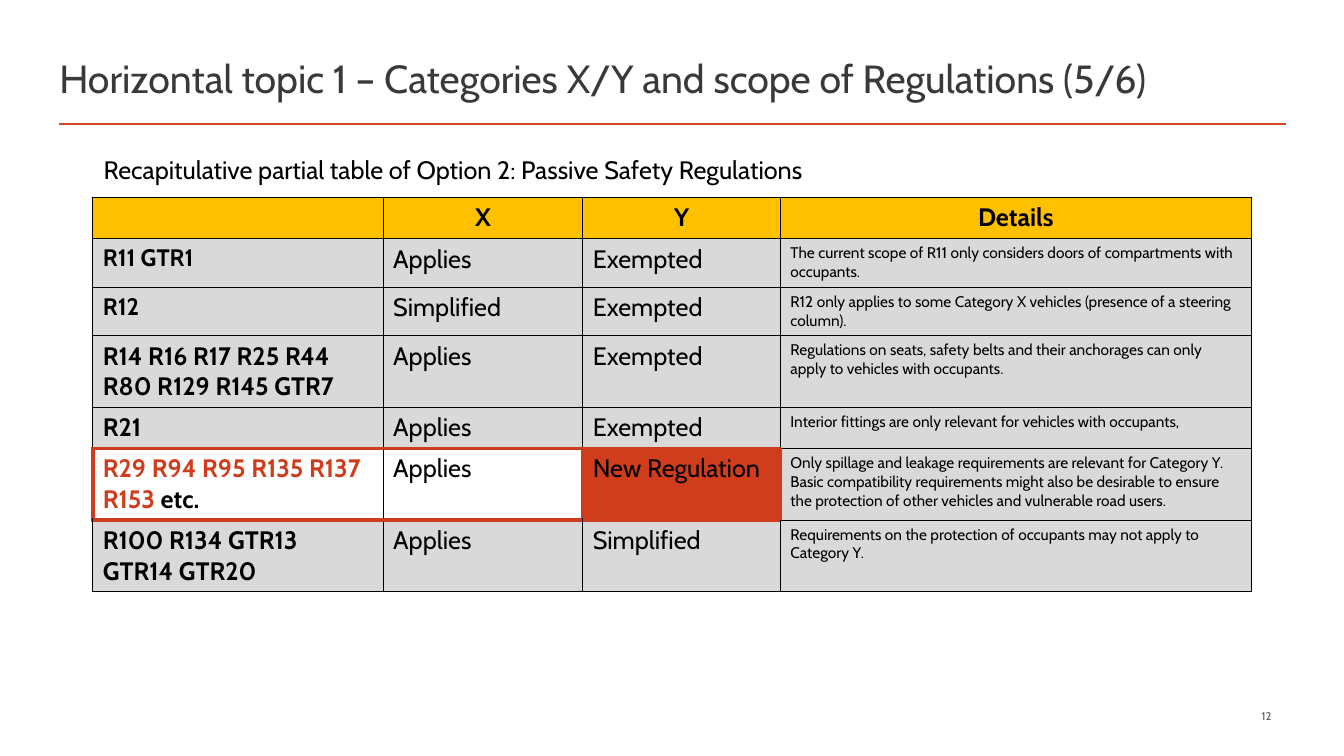
from lxml import etree
from pptx import Presentation
from pptx.dml.color import RGBColor
from pptx.enum.shapes import MSO_CONNECTOR
from pptx.enum.text import MSO_ANCHOR, PP_ALIGN
from pptx.oxml.ns import qn
from pptx.util import Inches, Pt

LEFT, CENTER, RIGHT = PP_ALIGN.LEFT, PP_ALIGN.CENTER, PP_ALIGN.RIGHT
TOP, MIDDLE = MSO_ANCHOR.TOP, MSO_ANCHOR.MIDDLE
STRAIGHT = MSO_CONNECTOR.STRAIGHT

FONT = "Cabin"
BLACK, WHITE, GREY, AMBER, RED = "000000", "FFFFFF", "D9D9D9", "FFC000", "CF3D1C"
RULE_COLOR = "D24726"

TITLE = "Horizontal topic 1 – Categories X/Y and scope of Regulations (5/6)"
CAPTION = "Recapitulative partial table of Option 2: Passive Safety Regulations"
PAGE_NUMBER = "12"
ROWS = [
    ("", "X", "Y", "Details"),
    ("R11 GTR1", "Applies", "Exempted",
     "The current scope of R11 only considers doors of compartments with occupants."),
    ("R12", "Simplified", "Exempted",
     "R12 only applies to some Category X vehicles (presence of a steering column)."),
    ("R14 R16 R17 R25 R44 R80 R129 R145 GTR7", "Applies", "Exempted",
     "Regulations on seats, safety belts and their anchorages can only apply to "
     "vehicles with occupants."),
    ("R21", "Applies", "Exempted",
     "Interior fittings are only relevant for vehicles with occupants,"),
    ("R29 R94 R95 R135 R137 R153 |etc.", "Applies", "New Regulation",
     "Only spillage and leakage requirements are relevant for Category Y. Basic "
     "compatibility requirements might also be desirable to ensure the protection "
     "of other vehicles and vulnerable road users."),
    ("R100 R134 GTR13 GTR14 GTR20", "Applies", "Simplified",
     "Requirements on the protection of occupants may not apply to Category Y."),
]
COLUMN_WIDTHS = [2.88, 1.98, 1.96, 4.67]
ROW_HEIGHTS = [0.41, 0.48, 0.48, 0.71, 0.41, 0.71, 0.71]
SMALL_LABEL_ROWS = (1, 2)
KEY_ROW, KEY_COLUMNS, KEY_EDGES = 5, (0, 1, 2), (0, 2, 3)


def rgb(color):
    return RGBColor.from_string(color)


def write(frame, text, size, color=BLACK, bold=False, align=LEFT):
    para = frame.paragraphs[0]
    para.alignment = align
    font = para.font
    font.name, font.size, font.bold = FONT, Pt(size), bold
    font.color.rgb = rgb(color)
    for part in filter(None, text.split("|")):
        para.add_run().text = part
    return para


def add_text(page, text, left, top, width, height, size, color, anchor=MIDDLE, align=LEFT):
    box = page.shapes.add_textbox(Inches(left), Inches(top), Inches(width), Inches(height))
    box.text_frame.word_wrap = True
    box.text_frame.vertical_anchor = anchor
    write(box.text_frame, text, size, color, align=align)


def add_border(cell, side, is_key):
    color, width = (RED, 3) if is_key else (BLACK, 0.75)
    line = etree.SubElement(cell._tc.get_or_add_tcPr(), qn(f"a:ln{side}"), w=str(Pt(width)))
    fill = etree.SubElement(line, qn("a:solidFill"))
    etree.SubElement(fill, qn("a:srgbClr"), val=color)


def style_cell(cell, row, column):
    def key_vertical(edge):
        return row == KEY_ROW and edge in KEY_EDGES

    def key_horizontal(edge):
        return column in KEY_COLUMNS and edge in (KEY_ROW, KEY_ROW + 1)

    add_border(cell, "L", key_vertical(column))
    add_border(cell, "R", key_vertical(column + 1))
    add_border(cell, "T", key_horizontal(row))
    add_border(cell, "B", key_horizontal(row + 1))

    color = AMBER if row == 0 else GREY
    if row == KEY_ROW and column in KEY_COLUMNS:
        color = RED if column == KEY_COLUMNS[-1] else WHITE
    cell.fill.solid()
    cell.fill.fore_color.rgb = rgb(color)


def add_table(page, left, top):
    table = page.shapes.add_table(
        len(ROWS), len(COLUMN_WIDTHS), Inches(left), Inches(top),
        Inches(sum(COLUMN_WIDTHS)), Inches(sum(ROW_HEIGHTS))).table
    for column, width in zip(table.columns, COLUMN_WIDTHS):
        column.width = Inches(width)
    for row, height in zip(table.rows, ROW_HEIGHTS):
        row.height = Inches(height)
    for row, texts in enumerate(ROWS):
        for column, text in enumerate(texts):
            cell = table.cell(row, column)
            style_cell(cell, row, column)
            size = 18
            if row > 0 and column == 3:
                size = 11
            elif row in SMALL_LABEL_ROWS and column == 0:
                size = 17
            para = write(cell.text_frame, text, size, bold=row == 0 or column == 0,
                         align=CENTER if row == 0 else LEFT)
            if row == KEY_ROW and column == 0:
                para.runs[0].font.color.rgb = rgb(RED)


def main():
    deck = Presentation()
    deck.slide_width, deck.slide_height = Inches(13.33), Inches(7.5)
    page = deck.slides.add_slide(deck.slide_layouts[6])

    rule = page.shapes.add_connector(
        STRAIGHT, Inches(0.59), Inches(1.23), Inches(12.75), Inches(1.23))
    rule.line.color.rgb = rgb(RULE_COLOR)
    rule.line.width = Pt(2)
    etree.SubElement(rule._element.spPr, qn("a:effectLst"))

    add_text(page, TITLE, 0.49, 0.47, 12.26, 0.61, 28, "3B3838")
    add_text(page, PAGE_NUMBER, 9.13, 7.03, 3.58, 0.15, 8, "595959", align=RIGHT)
    add_table(page, 0.92, 1.96)
    add_text(page, CAPTION, 0.93, 1.48, 11.36, 0.4, 18, BLACK, TOP)
    deck.save("out.pptx")


if __name__ == "__main__":
    main()
